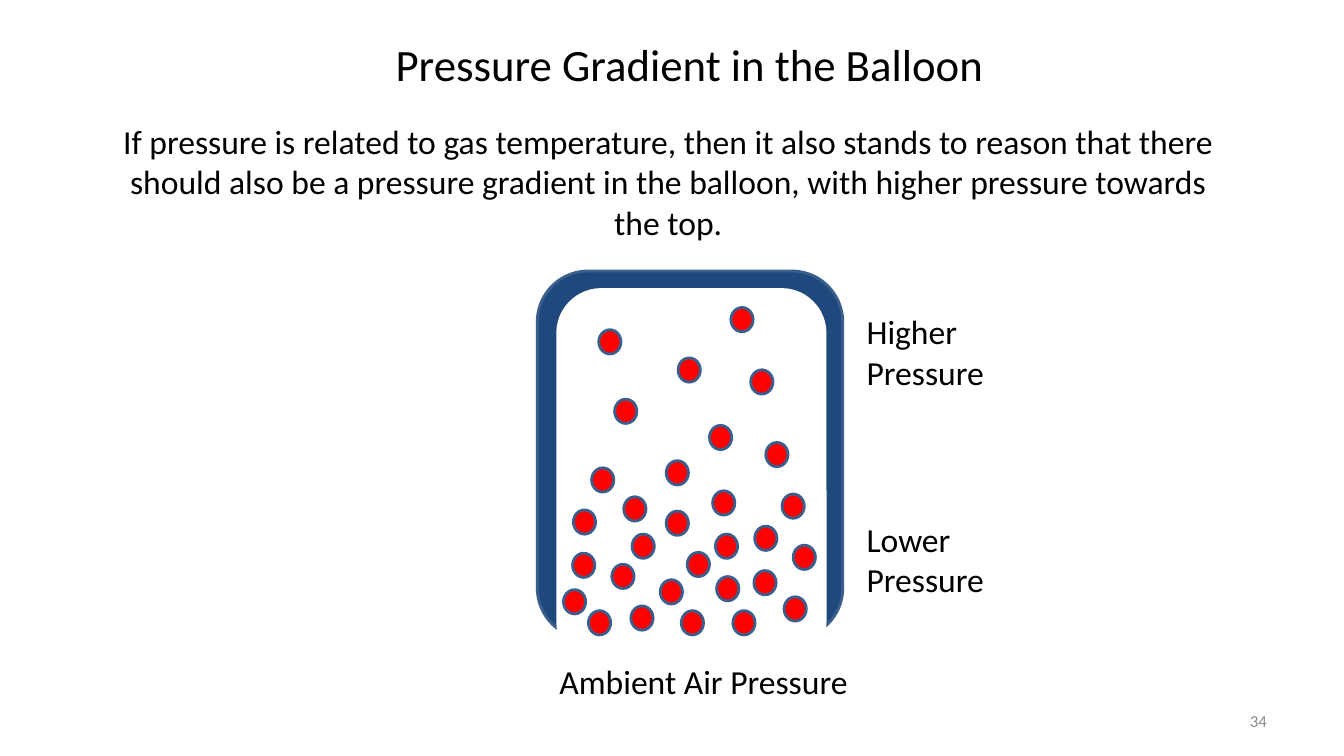
from pptx import Presentation
from pptx.dml.color import RGBColor
from pptx.enum.shapes import MSO_SHAPE
from pptx.enum.text import MSO_ANCHOR, MSO_AUTO_SIZE, PP_ALIGN
from pptx.util import Cm, Pt

MOLECULES = [
    (15.09, 8.31), (15.49, 10.06), (17.09, 9.02), (14.91, 11.79), (17.88, 10.72),
    (18.92, 9.32), (16.79, 11.61), (17.96, 12.37), (19.3, 11.15), (18.42, 7.75),
    (15.72, 12.52), (14.45, 12.85), (16.79, 12.88), (16.64, 14.61), (14.83, 15.39),
    (18.06, 14.53), (19.71, 12.45), (17.17, 15.39), (18.03, 13.46), (19.76, 15.04),
    (19.02, 13.26), (15.42, 14.22), (14.43, 13.94), (15.93, 13.46), (19.99, 13.74),
    (15.9, 15.27), (19.0, 14.38), (14.2, 14.86), (17.32, 13.92), (18.47, 15.39),
]
MOLECULE_SIZE = (0.56, 0.61)


def colour(code):
    return RGBColor.from_string(code)


def assign(target, values):
    for name, value in values.items():
        setattr(target, name, value)


class SlideBuilder:
    font = "Calibri"
    ink = "000000"
    outline = "3A5F8C"

    def __init__(self, page):
        self.page = page

    def place(self, box, area):
        names = ("left", "top", "width", "height")
        assign(box, dict(zip(names, map(Cm, area))))

    def fill_text(self, box, text, size, align, anchor=MSO_ANCHOR.TOP, ink=None):
        frame = box.text_frame
        assign(frame, {"word_wrap": True, "auto_size": MSO_AUTO_SIZE.NONE,
                       "vertical_anchor": anchor})
        para = frame.paragraphs[0]
        para.alignment = align
        span = para.add_run()
        span.text = text
        assign(span.font, {"name": self.font, "size": Pt(size)})
        span.font.color.rgb = colour(ink or self.ink)

    def title(self, text, area):
        box = self.page.shapes.title
        self.place(box, area)
        self.fill_text(box, text, 32, PP_ALIGN.CENTER)

    def text(self, text, area, size=24, align=PP_ALIGN.LEFT, **style):
        box = self.page.shapes.add_textbox(*map(Cm, area))
        self.fill_text(box, text, size, align, **style)

    def shape(self, kind, area, fill, outlined=True):
        box = self.page.shapes.add_shape(kind, *map(Cm, area))
        box.shadow.inherit = False
        box.fill.solid()
        box.fill.fore_color.rgb = colour(fill)
        if outlined:
            box.line.color.rgb = colour(self.outline)
            box.line.width = Pt(2)
        else:
            box.line.fill.background()


def main():
    deck = Presentation()
    assign(deck, {"slide_width": Cm(33.87), "slide_height": Cm(19.05)})
    slide = SlideBuilder(deck.slides.add_slide(deck.slide_layouts[5]))

    slide.title("Pressure Gradient in the Balloon", (8.53, 0.81, 17.7, 1.63))
    slide.text("34", (24.28, 17.65, 7.9, 1.02), size=12, align=PP_ALIGN.RIGHT,
               anchor=MSO_ANCHOR.MIDDLE, ink="8C8C8C")
    slide.text("If pressure is related to gas temperature, then it also stands to reason "
               "that there should also be a pressure gradient in the balloon, with higher "
               "pressure towards the top.", (2.64, 2.92, 28.4, 3.33), align=PP_ALIGN.CENTER)
    slide.text("Ambient Air Pressure", (11.61, 16.54, 12.24, 1.27), align=PP_ALIGN.CENTER)
    slide.text("Higher Pressure", (21.59, 7.72, 4.93, 2.31))

    slide.shape(MSO_SHAPE.ROUNDED_RECTANGLE, (13.54, 6.83, 7.7, 9.27), "1F497D")
    slide.shape(MSO_SHAPE.ROUNDED_RECTANGLE, (14.02, 7.26, 6.81, 9.55), "FFFFFF", outlined=False)
    for spot in MOLECULES:
        slide.shape(MSO_SHAPE.OVAL, spot + MOLECULE_SIZE, "FF0000")

    slide.text("Lower Pressure", (21.59, 12.95, 3.91, 2.31))
    deck.save("out.pptx")


if __name__ == "__main__":
    main()
